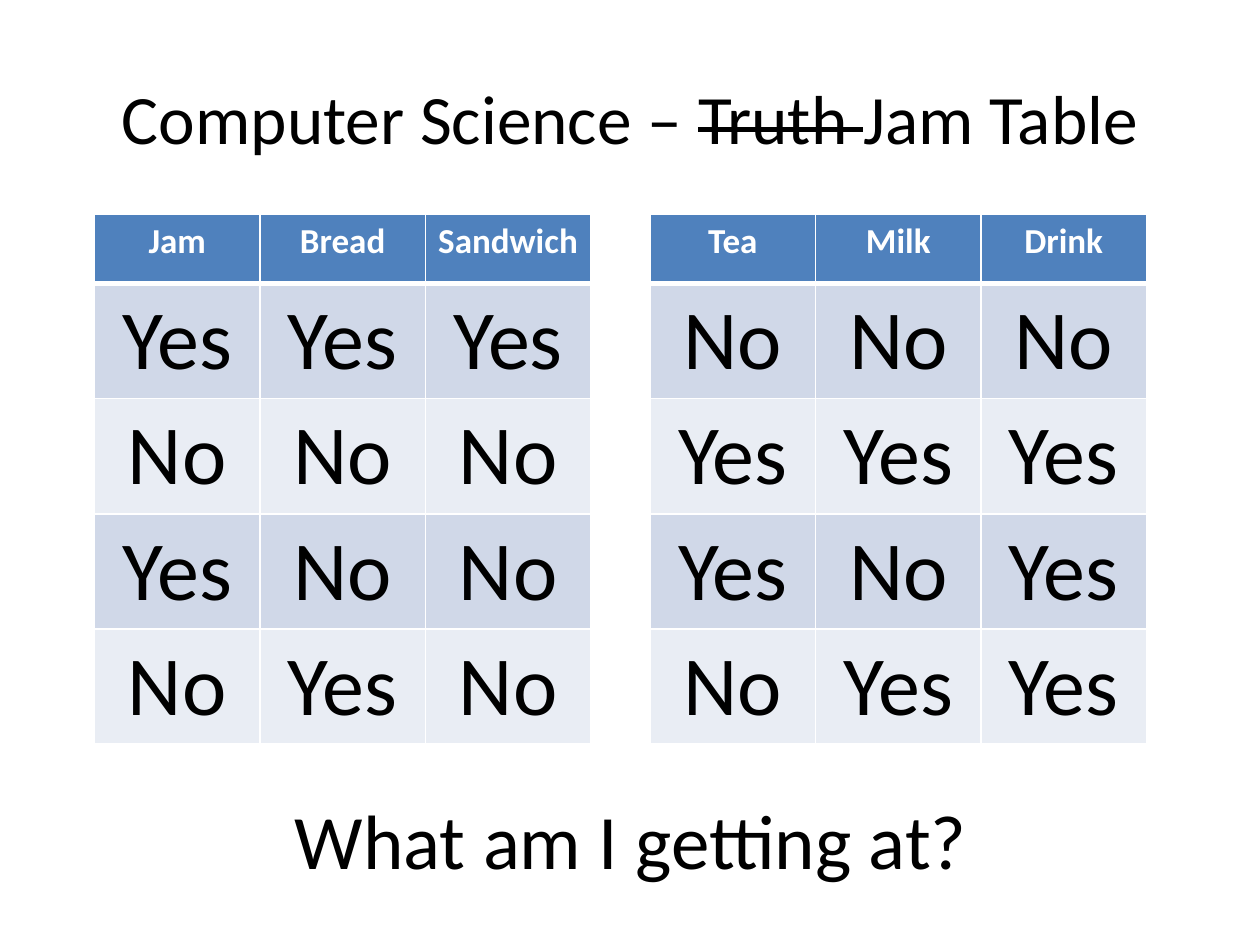
from lxml import etree
from pptx import Presentation
from pptx.dml.color import RGBColor
from pptx.enum.text import MSO_ANCHOR, PP_ALIGN
from pptx.oxml.ns import qn
from pptx.util import Pt

CENTER = PP_ALIGN.CENTER
MIDDLE = MSO_ANCHOR.MIDDLE
TITLE_ONLY = 5


def color(hex_code):
    return RGBColor.from_string(hex_code)


class TruthTableSlide:
    FONT = "Calibri"
    INK = "000000"
    WHITE = "FFFFFF"
    HEADER_FILL = "4F81BD"
    BANDS = ("D0D8E8", "E9EDF4")
    TABLE_TOP = 122.4
    COLUMN_WIDTH = 94.56
    HEADER_HEIGHT = 39.6
    ROW_HEIGHT = 64.8

    def __init__(self, presentation):
        self.slide = presentation.slides.add_slide(
            presentation.slide_layouts[TITLE_ONLY])

    def add_run(self, paragraph, text, size, ink=INK, bold=False, struck=False):
        run = paragraph.add_run()
        run.text = text
        run.font.name = self.FONT
        run.font.size = Pt(size)
        run.font.bold = bold
        run.font.color.rgb = color(ink)
        if struck:
            run.font._element.set("strike", "sngStrike")

    def write_centered(self, frame, runs, size):
        """Fill a frame with one centred line of (text, struck) runs."""
        frame.word_wrap = True
        frame.vertical_anchor = MIDDLE
        line = frame.paragraphs[0]
        line.alignment = CENTER
        for text, struck in runs:
            self.add_run(line, text, size, struck=struck)

    def add_title(self, runs):
        title = self.slide.shapes.title
        title.left, title.top = Pt(36), Pt(21.6)
        title.width, title.height = Pt(648), Pt(90)
        self.write_centered(title.text_frame, runs, 39.6)

    def add_question(self, text):
        question = self.slide.shapes.add_textbox(
            Pt(36.7), Pt(434.2), Pt(648), Pt(90))
        self.write_centered(question.text_frame, [(text, False)], 44)

    def set_borders(self, cell, top, bottom):
        properties = cell._tc.get_or_add_tcPr()
        for side, width in (("L", 1), ("R", 1), ("T", top), ("B", bottom)):
            edge = etree.SubElement(properties, qn(f"a:ln{side}"),
                                    w=str(Pt(width)))
            fill = etree.SubElement(edge, qn("a:solidFill"))
            etree.SubElement(fill, qn("a:srgbClr"), val=self.WHITE)

    def add_cell(self, cell, text, row):
        is_header = row == 0
        self.set_borders(cell, top=3 if row == 1 else 1,
                         bottom=3 if is_header else 1)
        cell.fill.solid()
        cell.fill.fore_color.rgb = color(
            self.HEADER_FILL if is_header else self.BANDS[(row - 1) % 2])
        line = cell.text_frame.paragraphs[0]
        line.alignment = CENTER
        if is_header:
            self.add_run(line, text, 20, self.WHITE, bold=True)
        else:
            self.add_run(line, text, 48)

    def add_truth_table(self, left, rows):
        row_count, column_count = len(rows), len(rows[0])
        height = self.HEADER_HEIGHT + (row_count - 1) * self.ROW_HEIGHT
        table = self.slide.shapes.add_table(
            row_count, column_count, Pt(left), Pt(self.TABLE_TOP),
            Pt(column_count * self.COLUMN_WIDTH), Pt(height)).table
        for column in table.columns:
            column.width = Pt(self.COLUMN_WIDTH)
        for r, answers in enumerate(rows):
            table.rows[r].height = Pt(self.ROW_HEIGHT if r else self.HEADER_HEIGHT)
            for c, answer in enumerate(answers):
                self.add_cell(table.cell(r, c), answer, r)


def main():
    presentation = Presentation()
    presentation.slide_width, presentation.slide_height = Pt(720), Pt(540)

    page = TruthTableSlide(presentation)
    page.add_title([("Computer Science – ", False), ("Truth ", True),
                    ("Jam Table", False)])
    page.add_truth_table(54, [
        ("Jam", "Bread", "Sandwich"),
        ("Yes", "Yes", "Yes"),
        ("No", "No", "No"),
        ("Yes", "No", "No"),
        ("No", "Yes", "No"),
    ])
    page.add_truth_table(371.5, [
        ("Tea", "Milk", "Drink"),
        ("No", "No", "No"),
        ("Yes", "Yes", "Yes"),
        ("Yes", "No", "Yes"),
        ("No", "Yes", "Yes"),
    ])
    page.add_question("What am I getting at?")

    presentation.save("out.pptx")


if __name__ == "__main__":
    main()
